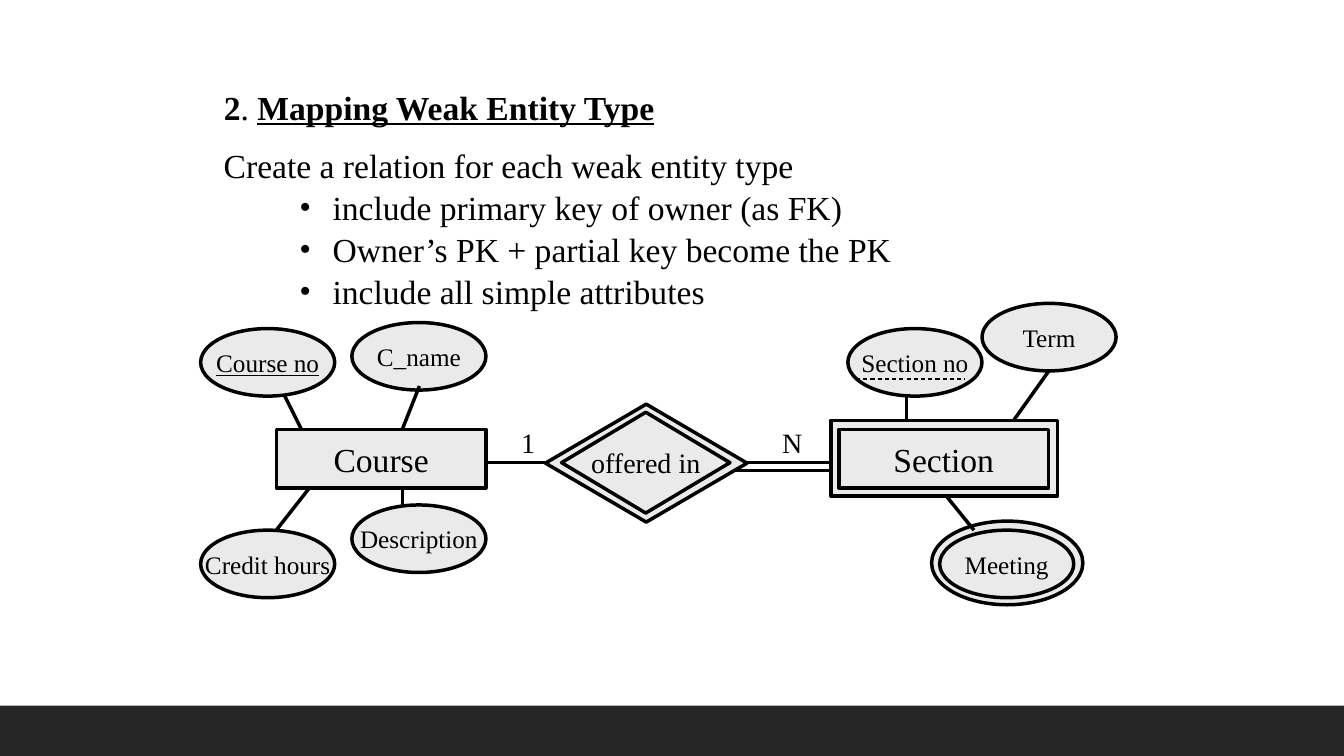
from lxml import etree
from pptx import Presentation
from pptx.dml.color import RGBColor
from pptx.enum.dml import MSO_LINE
from pptx.enum.shapes import MSO_CONNECTOR, MSO_SHAPE
from pptx.enum.text import MSO_ANCHOR, MSO_AUTO_SIZE, PP_ALIGN
from pptx.oxml.ns import qn
from pptx.util import Inches, Pt

BLACK = RGBColor(0x00, 0x00, 0x00)
PALE = RGBColor(0xEA, 0xEA, 0xEA)
DARK = RGBColor(0x26, 0x26, 0x26)
FONT = "Times New Roman"
RECT, OVAL, DIAMOND = MSO_SHAPE.RECTANGLE, MSO_SHAPE.OVAL, MSO_SHAPE.DIAMOND
STRAIGHT, DASH = MSO_CONNECTOR.STRAIGHT, MSO_LINE.DASH
LEFT, CENTER = PP_ALIGN.LEFT, PP_ALIGN.CENTER
TOP, MIDDLE = MSO_ANCHOR.TOP, MSO_ANCHOR.MIDDLE
FIXED = MSO_AUTO_SIZE.NONE

ENTITY = (2.08, 0.58)
ATTR = (1.33, 0.67)


def write(par, text, size=24, bold=False, under=False, align=LEFT, gap=0):
    """Add one formatted run to a paragraph."""
    par.alignment = align
    par.space_before = Pt(gap)
    run = par.add_run()
    run.text = text
    font = run.font
    font.name, font.size, font.bold, font.underline = FONT, Pt(size), bold, under
    font.color.rgb = BLACK


def bullet(par):
    """Give a paragraph a hanging bullet."""
    props = par._p.get_or_add_pPr()
    props.set("marL", str(Inches(1.08)))
    props.set("indent", str(Inches(-0.33)))
    etree.SubElement(props, qn("a:buFont")).set("typeface", FONT)
    etree.SubElement(props, qn("a:buChar")).set("char", "•")


def box(slide, x, y, w, h):
    """Add a wrapping text box and return its frame."""
    frame = slide.shapes.add_textbox(
        Inches(x), Inches(y), Inches(w), Inches(h)).text_frame
    frame.word_wrap = True
    return frame


def node(slide, kind, x, y, area, text="", fill=PALE, edge=True, **fmt):
    """Add a filled shape with an optional centred label."""
    shape = slide.shapes.add_shape(
        kind, Inches(x), Inches(y), Inches(area[0]), Inches(area[1]))
    shape.shadow.inherit = False
    shape.fill.solid()
    shape.fill.fore_color.rgb = fill
    if edge:
        shape.line.color.rgb = BLACK
        shape.line.width = Pt(2.5)
    else:
        shape.line.fill.background()
    if text:
        frame = shape.text_frame
        frame.word_wrap = False
        frame.vertical_anchor = MIDDLE
        write(frame.paragraphs[0], text, align=CENTER, **fmt)


def link(slide, x1, y1, x2, y2, width=2.5, dash=None):
    """Add a straight black line."""
    line = slide.shapes.add_connector(
        STRAIGHT, Inches(x1), Inches(y1), Inches(x2), Inches(y2))
    line.line.color.rgb = BLACK
    line.line.width = Pt(width)
    line.line.dash_style = dash
    etree.SubElement(line._element.spPr, qn("a:effectLst"))


def head(slide):
    """Place and fill the title."""
    title = slide.shapes.title
    title.left, title.top = Inches(2.12), Inches(0.81)
    title.width, title.height = Inches(8.25), Inches(0.5)
    frame = title.text_frame
    frame.auto_size = FIXED
    frame.vertical_anchor = TOP
    par = frame.paragraphs[0]
    write(par, "2", bold=True)
    write(par, ". ")
    write(par, "Mapping Weak Entity Type", bold=True, under=True)


def rules(slide):
    """Add the mapping rule and its bullets."""
    frame = box(slide, 2.12, 1.39, 8.25, 1.72)
    write(frame.paragraphs[0], "Create a relation for each weak entity type")
    for text in ("include primary key of owner (as FK)",
                 "Owner’s PK + partial key become the PK",
                 "include all simple attributes"):
        par = frame.add_paragraph()
        write(par, text, gap=1.2)
        bullet(par)


def bond(slide):
    """Draw the relationship between the two entities."""
    for x, w, text in ((5.07, 0.33, "1"), (7.66, 0.5, "N")):
        write(box(slide, x, 4.17, w, 0.43).paragraphs[0], text, size=20)
    link(slide, 4.82, 4.59, 8.32, 4.59)
    link(slide, 7.16, 4.67, 8.32, 4.67)
    node(slide, DIAMOND, 5.41, 4.01, (2, 1.17))
    node(slide, DIAMOND, 5.57, 4.09, (1.67, 1), "offered in", size=20)


def attrs(slide):
    """Draw the attributes and their links."""
    node(slide, OVAL, 9.24, 5.17, (1.5, 0.83))
    for x, y, text, key in ((8.41, 3.26, "Section no", False),
                            (9.74, 3.01, "Term", False),
                            (9.32, 5.26, "Meeting", False),
                            (1.99, 3.26, "Course no", True),
                            (3.49, 3.2, "C_name", False),
                            (1.99, 5.26, "Credit hours", False),
                            (3.49, 5.01, "Description", False)):
        node(slide, OVAL, x, y, ATTR, text, size=18, under=key)
    for ends in ((8.99, 3.92, 8.99, 4.26), (10.41, 3.67, 9.99, 4.26),
                 (9.32, 4.84, 9.66, 5.26), (2.82, 3.92, 2.99, 4.26),
                 (3.07, 4.84, 2.74, 5.26), (4.16, 3.83, 3.99, 4.26),
                 (3.99, 4.84, 3.99, 5.01)):
        link(slide, *ends)
    link(slide, 8.49, 3.76, 9.57, 3.76, width=0.75, dash=DASH)


def main():
    """Build and save the slide."""
    deck = Presentation()
    deck.slide_width, deck.slide_height = Inches(13.33), Inches(7.5)
    slide = deck.slides.add_slide(deck.slide_layouts[5])
    node(slide, RECT, 0, 7, (13.33, 0.5), fill=DARK, edge=False)
    head(slide)
    rules(slide)
    node(slide, RECT, 2.74, 4.26, ENTITY, "Course")
    bond(slide)
    attrs(slide)
    node(slide, RECT, 8.24, 4.17, (2.25, 0.75))
    node(slide, RECT, 8.32, 4.26, ENTITY, "Section")
    deck.save("out.pptx")


if __name__ == "__main__":
    main()
